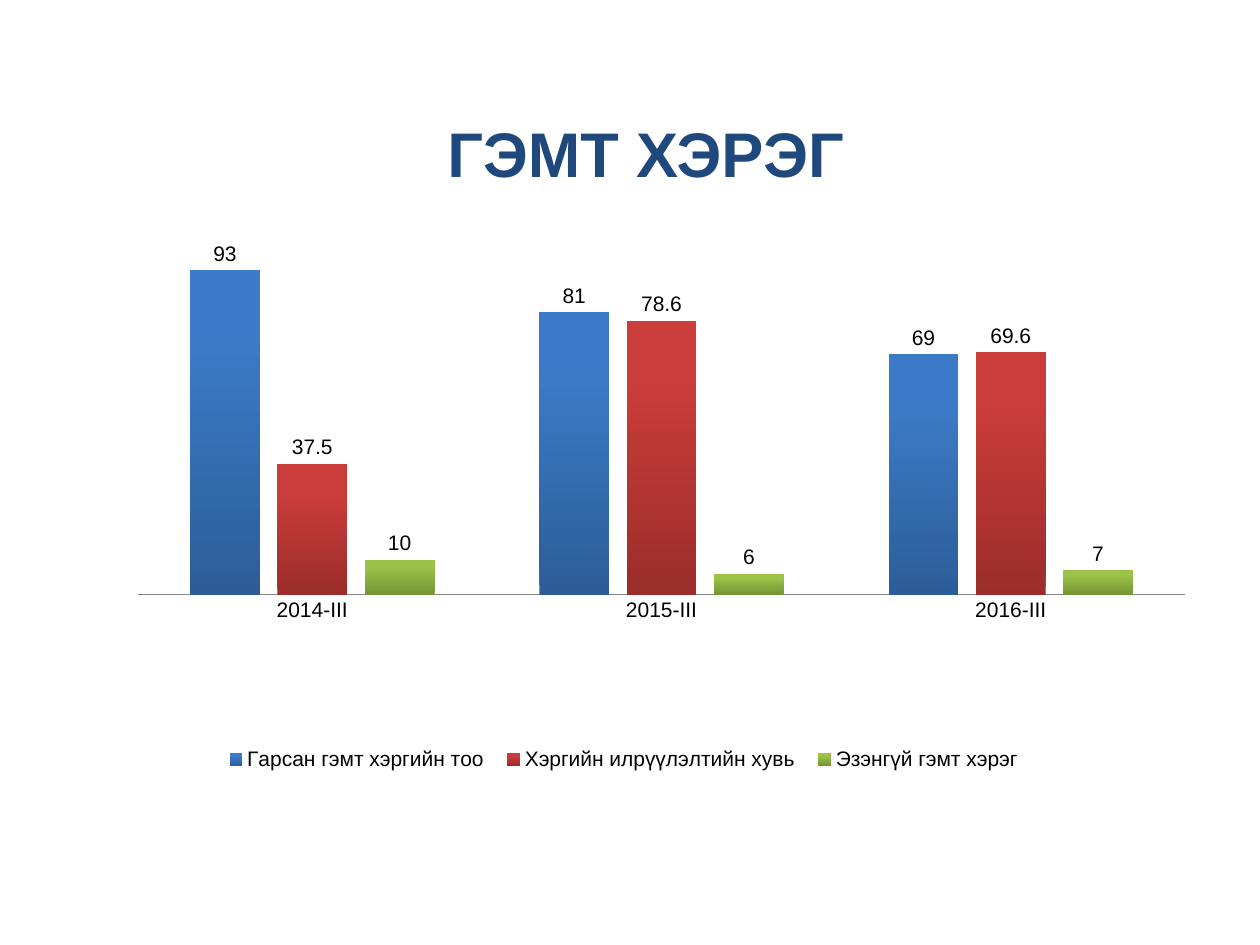
from dataclasses import dataclass

from lxml import etree
from pptx import Presentation
from pptx.chart import data as cd
from pptx.dml.color import RGBColor
from pptx.enum import chart as ch, text as tx
from pptx.oxml import parse_xml
from pptx.oxml.ns import qn
from pptx.util import Pt

NS = ('xmlns:c="http://schemas.openxmlformats.org/drawingml/2006/chart" '
      'xmlns:a="http://schemas.openxmlformats.org/drawingml/2006/main"')


@dataclass(frozen=True)
class Theme:
    font: str = "Arial"
    title: str = "1F497D"
    ink: str = "000000"
    axis: str = "868686"
    edge: str = "FFFFFF"
    head: float = 36
    body: float = 12


@dataclass(frozen=True)
class Series:
    name: str
    vals: tuple
    light: str
    dark: str
    fmt: str = "General"


@dataclass(frozen=True)
class Box:
    x: float
    y: float
    w: float
    h: float

    def pts(self) -> list:
        return [Pt(v) for v in (self.x, self.y, self.w, self.h)]


THEME = Theme()
CATS = ("2014-III", "2015-III", "2016-III")
SERIES = (
    Series("Гарсан гэмт хэргийн тоо", (93, 81, 69), "3C7BC7", "2C5D98"),
    Series("Хэргийн илрүүлэлтийн хувь", (37.5, 78.6, 69.6),
           "CB3D3A", "9B2D2A", "0.0"),
    Series("Эзэнгүй гэмт хэрэг", (10, 6, 7), "9BC348", "769535"),
)


def style(font, size: float, color: str, bold: bool = False) -> None:
    font.name, font.size, font.bold = THEME.font, Pt(size), bold
    font.color.rgb = RGBColor.from_string(color)


def write(shape, words: str, *, size: float, color: str, bold: bool = False,
          align=tx.PP_ALIGN.CENTER) -> None:
    frame = shape.text_frame
    frame.word_wrap = True
    frame.vertical_anchor = tx.MSO_ANCHOR.MIDDLE
    par = frame.paragraphs[0]
    par.alignment = align
    run = par.add_run()
    run.text = words
    style(run.font, size, color, bold)


def layout(box: Box, inner: bool = False) -> etree.ElementBase:
    """Manual chart layout; the box holds fractions of the chart area."""
    target = '<c:layoutTarget val="inner"/>' if inner else ""
    parts = "".join(f'<c:{k}Mode val="edge"/>' for k in "xy")
    parts += "".join(f'<c:{k} val="{getattr(box, k)}"/>' for k in "xywh")
    return parse_xml(f"<c:layout {NS}><c:manualLayout>{target}{parts}"
                     "</c:manualLayout></c:layout>")


def paint(bar, item: Series) -> None:
    """Shade a series upward from dark to light and label its bars."""
    fill = bar.format.fill
    fill.gradient()
    fill.gradient_angle = 90
    stops = zip(fill.gradient_stops, (item.dark, item.light), (0, 0.8))
    for stop, color, pos in stops:
        stop.color.rgb = RGBColor.from_string(color)
        stop.position = pos
    bar.invert_if_negative = False
    tags = bar.data_labels
    tags.show_value = True
    tags.number_format = item.fmt
    tags.number_format_is_linked = False
    tags.position = ch.XL_LABEL_POSITION.OUTSIDE_END
    style(tags.font, THEME.body, THEME.ink)


def add_bars(slide, box: Box, plot: Box, key: Box) -> None:
    data = cd.CategoryChartData()
    data.categories = CATS
    for item in SERIES:
        data.add_series(item.name, item.vals)
    kind = ch.XL_CHART_TYPE.COLUMN_CLUSTERED
    chart = slide.shapes.add_chart(kind, *box.pts(), data).chart
    style(chart.font, THEME.body, THEME.ink)
    chart.has_title = False

    bars = chart.plots[0]
    bars.gap_width, bars.overlap = 150, -25
    bars.vary_by_categories = False
    for bar, item in zip(bars.series, SERIES):
        paint(bar, item)

    vals = chart.value_axis
    vals.minimum_scale, vals.maximum_scale = 0, 100
    vals.has_major_gridlines = False
    vals.visible = False
    cats = chart.category_axis
    cats.major_tick_mark = ch.XL_TICK_MARK.NONE
    cats.format.line.color.rgb = RGBColor.from_string(THEME.axis)

    chart.has_legend = True
    legend = chart.legend
    legend.position = ch.XL_LEGEND_POSITION.TOP
    legend.include_in_layout = False
    style(legend.font, THEME.body, THEME.ink)

    root = chart.element
    root.find(".//" + qn("c:legendPos")).addnext(layout(key))
    area = root.find(".//" + qn("c:plotArea"))
    for old in area.findall(qn("c:layout")):
        area.remove(old)
    area.insert(0, layout(plot, inner=True))
    root.find(qn("c:chart")).addnext(parse_xml(
        f'<c:spPr {NS}><a:noFill/><a:ln w="{Pt(0.75)}"><a:solidFill>'
        f'<a:srgbClr val="{THEME.edge}"/></a:solidFill></a:ln></c:spPr>'))


def main() -> None:
    deck = Presentation()
    deck.slide_width, deck.slide_height = Pt(720), Pt(540)
    slide = deck.slides.add_slide(deck.slide_layouts[5])
    title = slide.shapes.title
    title.left, title.top, title.width, title.height = Box(
        114, 60, 510, 54).pts()
    write(title, "ГЭМТ ХЭРЭГ", size=THEME.head, color=THEME.title, bold=True)
    add_bars(slide, Box(66, 126, 618, 356.5),
             plot=Box(0.02, 0.04, 0.97, 0.56), key=Box(0.09, 0.83, 0.76, 0.07))
    deck.save("out.pptx")


if __name__ == "__main__":
    main()
